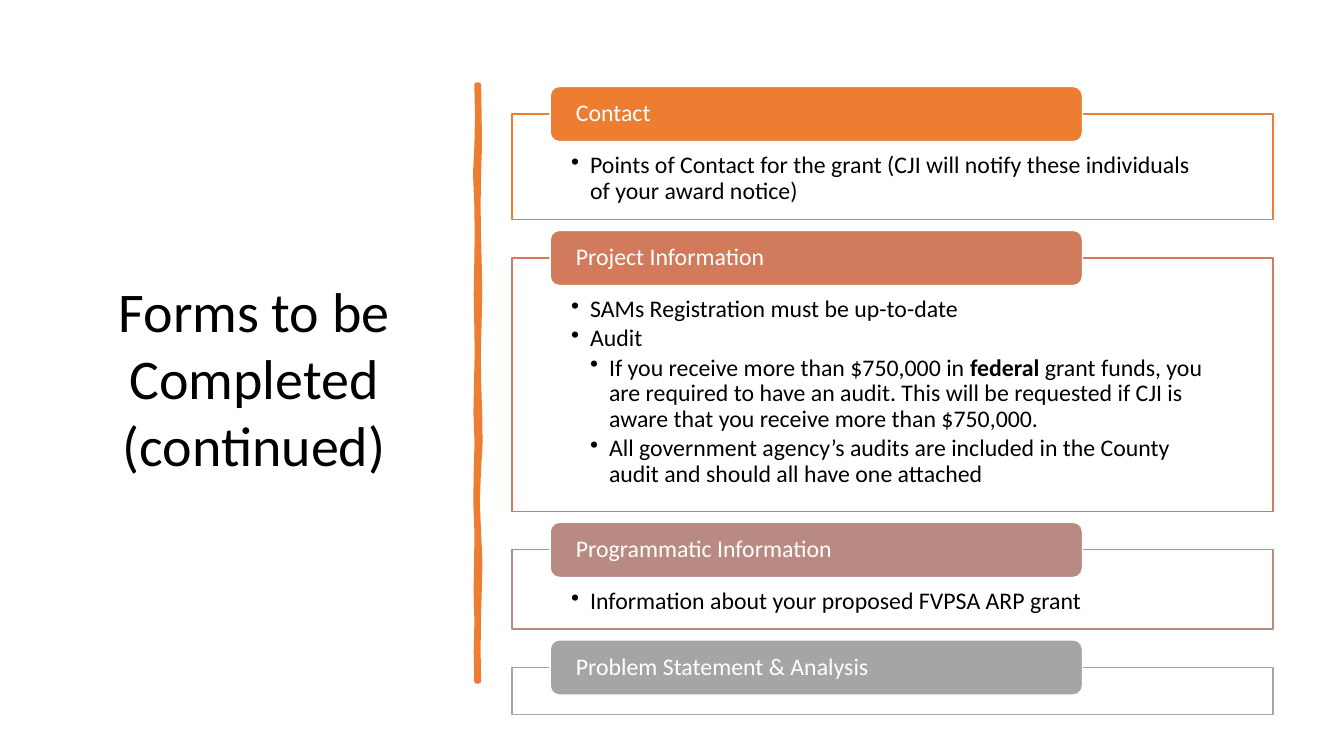
from lxml import etree
from pptx import Presentation
from pptx.dml.color import RGBColor
from pptx.enum.shapes import MSO_SHAPE
from pptx.enum.text import MSO_ANCHOR, PP_ALIGN
from pptx.oxml.ns import qn
from pptx.util import Pt

RECTANGLE, ROUNDED = MSO_SHAPE.RECTANGLE, MSO_SHAPE.ROUNDED_RECTANGLE
TOP, MIDDLE = MSO_ANCHOR.TOP, MSO_ANCHOR.MIDDLE
LEFT, CENTER = PP_ALIGN.LEFT, PP_ALIGN.CENTER

COLORS = {
    "white": "FFFFFF", "black": "000000", "orange": "ED7D31",
    "terracotta": "D17B5C", "rose": "B98A82", "gray": "A5A5A5",
}
FONT = "Calibri"
TITLE = "Forms to be Completed (continued)"

# heading, colour, box height, bullets as (level, [(text, bold), ...])
SECTIONS = [
    ("Contact", "orange", 75.5, [
        (1, [("Points of Contact for the grant (CJI will notify these individuals "
              "of your award notice)", False)]),
    ]),
    ("Project Information", "terracotta", 181.2, [
        (1, [("SAMs Registration must be up-to-date", False)]),
        (1, [("Audit", False)]),
        (2, [("If you receive more than $750,000 in ", False), ("federal", True),
             (" grant funds, you are required to have an audit. This will be requested "
              "if CJI is aware that you receive more than $750,000.", False)]),
        (2, [("All government agency’s audits are included in the County audit "
              "and should all have one attached", False)]),
    ]),
    ("Programmatic Information", "rose", 56.7, [
        (1, [("Information about your proposed FVPSA ARP grant", False)]),
    ]),
    ("Problem Statement & Analysis", "gray", 33.8, []),
]

BOX_LEFT, BOX_WIDTH, FIRST_TOP, GAP = 365.8, 543.5, 81.4, 27.3
TAB_LEFT, TAB_WIDTH, TAB_HEIGHT, TAB_RISE = 393, 380.2, 39.4, 19.6
INDENT = 13.5

RULE_CENTER, RULE_TOP, RULE_BOTTOM = 341.2, 60.5, 486.7
RIGHT_EDGE = [0.8, 1.2, 1.5, 0.8, 0.5, 0.7, 1.3, 1.6, 1.2, 0.6, 0.9,
              1.6, 1.9, 0.7, -0.1, 0.8, 1.8, 1.3, 0.7, 0.5, 0.8]
LEFT_EDGE = [-0.8, -0.2, -0.7, -1.7, -0.8, -0.5, -0.8, -1.2, -0.8, -0.5, -1,
             -1.4, -0.6, -1.2, -1.5, -0.7, -0.9, -1.3, -0.7, -1.2, -0.8]


def color(name):
    return RGBColor.from_string(COLORS[name])


def add_panel(slide, kind, bounds, fill, line):
    panel = slide.shapes.add_shape(kind, *map(Pt, bounds))
    panel.shadow.inherit = False
    panel.fill.solid()
    panel.fill.fore_color.rgb = color(fill)
    panel.line.color.rgb = color(line)
    panel.line.width = Pt(1)
    return panel


def set_frame(shape, anchor, insets):
    frame = shape.text_frame
    frame.word_wrap = True
    frame.vertical_anchor = anchor
    (frame.margin_left, frame.margin_top,
     frame.margin_right, frame.margin_bottom) = map(Pt, insets)
    return frame


def style(para, size, name, align):
    para.font.size = Pt(size)
    para.font.name = FONT
    para.font.color.rgb = color(name)
    para.alignment = align


def add_bullets(frame, bullets):
    for index, (level, spans) in enumerate(bullets):
        para = frame.add_paragraph() if index else frame.paragraphs[0]
        para.level = level
        para.line_spacing = 0.9
        para.space_after = Pt(2.5)
        style(para, 17, "black", LEFT)
        properties = para._p.get_or_add_pPr()
        properties.set("marL", str(Pt(INDENT * level)))
        properties.set("indent", str(Pt(-INDENT)))
        bullet = etree.Element(qn("a:buChar"), char="•")
        properties.find(qn("a:defRPr")).addprevious(bullet)
        for text, bold in spans:
            span = para.add_run()
            span.text = text
            if bold:
                span.font.bold = True


def add_rule(slide):
    step = (RULE_BOTTOM - RULE_TOP) / (len(RIGHT_EDGE) - 1)
    right, left = (
        [(Pt(RULE_CENTER + offset), Pt(RULE_TOP + step * row))
         for row, offset in enumerate(edge)]
        for edge in (RIGHT_EDGE, LEFT_EDGE))
    points = right + left[::-1]
    builder = slide.shapes.build_freeform(*points[0])
    builder.add_line_segments(points[1:], close=True)
    rule = builder.convert_to_shape()
    rule.shadow.inherit = False
    rule.fill.solid()
    rule.fill.fore_color.rgb = color("orange")
    rule.line.color.rgb = color("orange")
    rule.line.width = Pt(3.25)
    etree.SubElement(rule.line._get_or_add_ln(), qn("a:round"))


def add_sections(slide):
    top = FIRST_TOP
    for heading, accent, height, bullets in SECTIONS:
        box = add_panel(slide, RECTANGLE, (BOX_LEFT, top, BOX_WIDTH, height), "white", accent)
        add_bullets(set_frame(box, TOP, (42.2, 28.1, 42.2, 9.4)), bullets)
        tab = add_panel(slide, ROUNDED, (TAB_LEFT, top - TAB_RISE, TAB_WIDTH, TAB_HEIGHT),
                        accent, "white")
        para = set_frame(tab, MIDDLE, (16.4, 0, 16.4, 0)).paragraphs[0]
        para.text = heading
        para.line_spacing = 0.9
        style(para, 17, "white", LEFT)
        top += height + GAP


def main():
    """Build the slide of forms to be completed."""
    deck = Presentation()
    deck.slide_width, deck.slide_height = Pt(960), Pt(540)
    slide = deck.slides.add_slide(deck.slide_layouts[6])
    add_rule(slide)
    add_sections(slide)
    title = slide.shapes.add_textbox(Pt(47.5), Pt(193.7), Pt(267.8), Pt(152.6))
    para = set_frame(title, TOP, (7.2, 3.6, 7.2, 3.6)).paragraphs[0]
    para.text = TITLE
    style(para, 40, "black", CENTER)
    deck.save("out.pptx")


if __name__ == "__main__":
    main()
